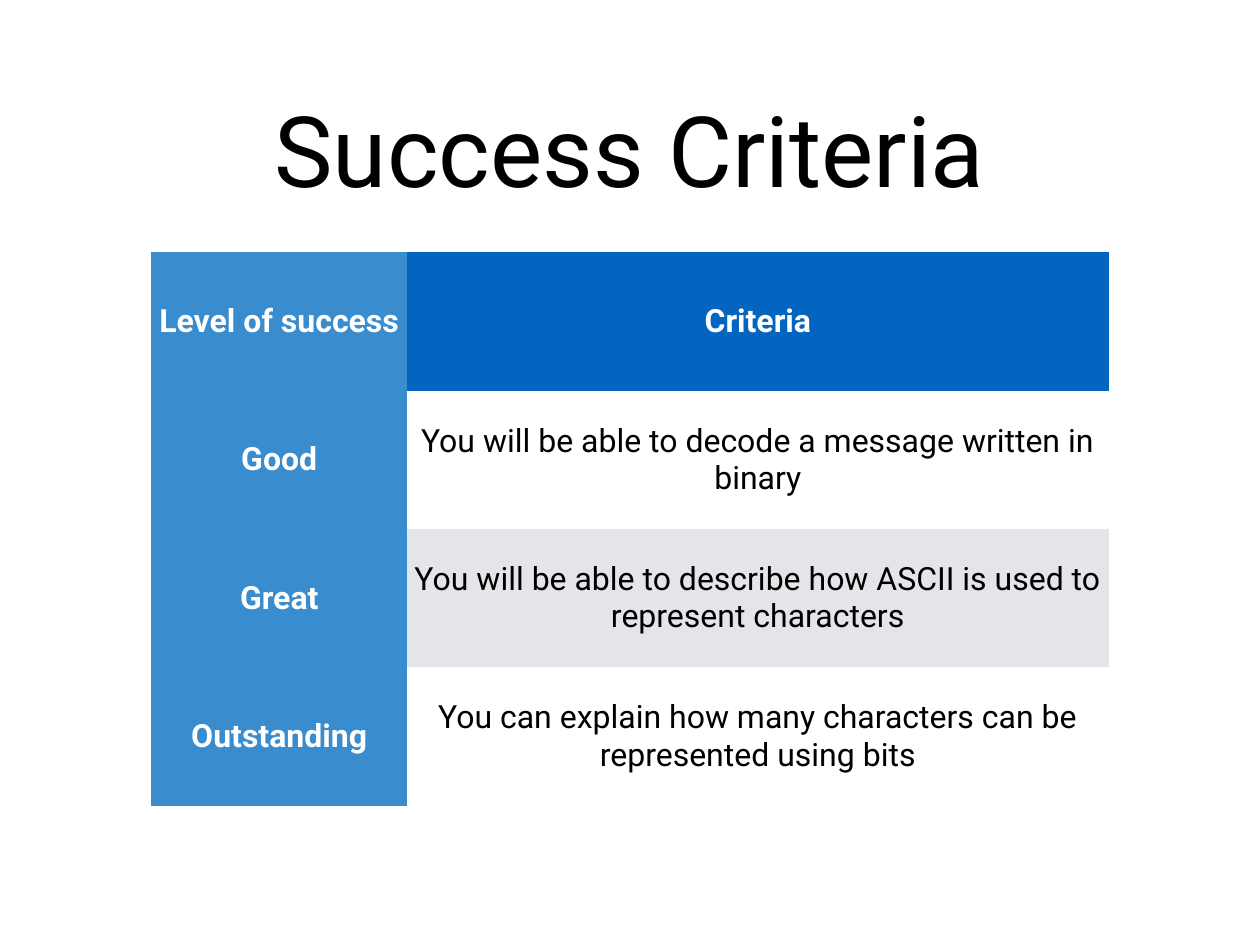
from pptx import Presentation
from pptx.dml.color import RGBColor
from pptx.enum.text import MSO_ANCHOR, MSO_AUTO_SIZE, PP_ALIGN
from pptx.oxml.ns import qn
from pptx.util import Pt

TITLE = "Success Criteria"
ROWS = [
    ("Level of success", "Criteria"),
    ("Good", "You will be able to decode a message written in binary"),
    ("Great", "You will be able to describe how ASCII is used to represent characters"),
    ("Outstanding", "You can explain how many characters can be represented using bits"),
]
COLUMN_WIDTHS = (208, 570)
ROW_HEIGHT = 112.5
TABLE_LEFT, TABLE_TOP = 123, 205
MARGIN = 4
FONT = "Roboto"
LEVEL_FILL, HEADER_FILL = "398CCE", "0365C0"
BAND_FILLS = ("E3E5E8", "FFFFFF")
WHITE, BLACK = "FFFFFF", "000000"
PLAIN_TABLE_STYLE = "{2D5ABB26-0587-4C30-8999-92F81FD0307C}"


def color(value):
    return RGBColor.from_string(value)


def set_margins(target):
    target.margin_left = target.margin_right = Pt(MARGIN)
    target.margin_top = target.margin_bottom = Pt(MARGIN)
    target.vertical_anchor = MSO_ANCHOR.MIDDLE


def format_paragraph(paragraph, size, text_color, bold=False):
    paragraph.alignment = PP_ALIGN.CENTER
    font = paragraph.font
    font.name = FONT
    font.size = Pt(size)
    font.bold = bold
    font.color.rgb = color(text_color)


def add_title(slide):
    title = slide.shapes.title
    title.left, title.top, title.width, title.height = Pt(75), Pt(35), Pt(874), Pt(170)
    title.text = TITLE
    frame = title.text_frame
    frame.auto_size = MSO_AUTO_SIZE.NONE
    set_margins(frame)
    format_paragraph(frame.paragraphs[0], 80, BLACK)


def add_criteria_table(slide):
    graphic_frame = slide.shapes.add_table(
        len(ROWS), len(COLUMN_WIDTHS), Pt(TABLE_LEFT), Pt(TABLE_TOP),
        Pt(sum(COLUMN_WIDTHS)), Pt(ROW_HEIGHT * len(ROWS)))
    for style in graphic_frame.element.iter(qn("a:tableStyleId")):
        style.text = PLAIN_TABLE_STYLE
    table = graphic_frame.table
    table.first_col = True
    for column, width in zip(table.columns, COLUMN_WIDTHS):
        column.width = Pt(width)
    for row_index, texts in enumerate(ROWS):
        table.rows[row_index].height = Pt(ROW_HEIGHT)
        for column_index, text in enumerate(texts):
            cell = table.cell(row_index, column_index)
            is_heading = row_index == 0 or column_index == 0
            if column_index == 0:
                fill = LEVEL_FILL
            elif row_index == 0:
                fill = HEADER_FILL
            else:
                fill = BAND_FILLS[row_index % 2]
            cell.fill.solid()
            cell.fill.fore_color.rgb = color(fill)
            cell.text = text
            set_margins(cell)
            format_paragraph(cell.text_frame.paragraphs[0], 26,
                             WHITE if is_heading else BLACK, is_heading)


def main():
    presentation = Presentation()
    presentation.slide_width, presentation.slide_height = Pt(1024), Pt(768)
    slide = presentation.slides.add_slide(presentation.slide_layouts[5])
    add_title(slide)
    add_criteria_table(slide)
    presentation.save("out.pptx")


if __name__ == "__main__":
    main()
